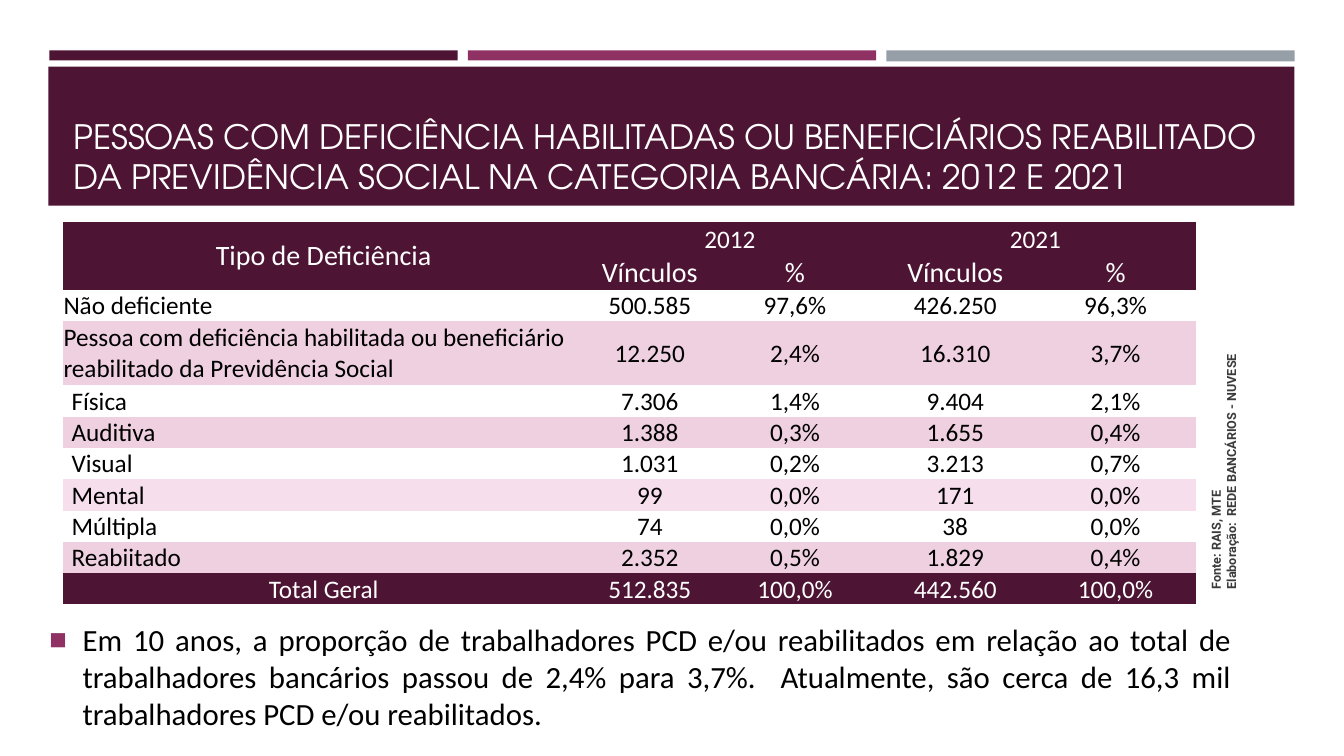
from dataclasses import dataclass

from lxml import etree
from pptx import Presentation
from pptx import util as u
from pptx.dml import color
from pptx.enum import shapes, text
from pptx.oxml import ns

SCALE = 9144
PLUM, ROSE, GREY = "4D1434", "903163", "969FA7"
WHITE, BLACK, INK = "FFFFFF", "000000", "3B3B3B"
PINK, PALE = "EFD0E0", "F6DEEC"
LEFT, MID, JUST = text.PP_ALIGN.LEFT, text.PP_ALIGN.CENTER, text.PP_ALIGN.JUSTIFY
CENTRE, BASE = text.MSO_ANCHOR.MIDDLE, text.MSO_ANCHOR.BOTTOM


@dataclass
class Box:
    x: int
    y: int
    w: int
    h: int

    def emu(self) -> list[int]:
        return [px(n) for n in (self.x, self.y, self.w, self.h)]


@dataclass
class Bar:
    box: Box
    fill: str


@dataclass
class Row:
    label: str
    data: str
    fill: str = WHITE
    ink: str = BLACK
    inset: int = 1
    high: int = 31
    align: int = LEFT


BARS = [
    Bar(Box(49, 50, 405, 10), PLUM),
    Bar(Box(464, 50, 405, 10), ROSE),
    Bar(Box(879, 50, 405, 11), GREY),
    Bar(Box(48, 66, 1236, 138), PLUM),
]

WIDTHS = [518, 129, 159, 159, 159]
HEADS = [33, 34]
ROWS = [
    Row("Não deficiente", "500.585 97,6% 426.250 96,3%"),
    Row("Pessoa com deficiência habilitada ou beneficiário reabilitado da Previdência Social",
        "12.250 2,4% 16.310 3,7%", PINK, high=64),
    Row("Física", "7.306 1,4% 9.404 2,1%", inset=9),
    Row("Auditiva", "1.388 0,3% 1.655 0,4%", PINK, inset=9),
    Row("Visual", "1.031 0,2% 3.213 0,7%", inset=9),
    Row("Mental", "99 0,0% 171 0,0%", PALE, inset=9),
    Row("Múltipla", "74 0,0% 38 0,0%", inset=9),
    Row("Reabiitado", "2.352 0,5% 1.829 0,4%", PINK, inset=9),
    Row("Total Geral", "512.835 100,0% 442.560 100,0%", PLUM, WHITE, align=MID),
]


def px(n: int) -> int:
    return n * SCALE


def rgb(code: str) -> color.RGBColor:
    return color.RGBColor.from_string(code)


def write(frame, words: str, *, size: int, ink: str = BLACK, font: str = "Calibri",
          bold: bool = False, align: int = LEFT, lead: float | None = None) -> None:
    frame.word_wrap = True
    for i, line in enumerate(words.split("\n")):
        para = frame.add_paragraph() if i else frame.paragraphs[0]
        para.alignment = align
        if lead:
            para.line_spacing = u.Pt(lead)
        run = para.add_run()
        run.text = line
        run.font.size = u.Pt(size)
        run.font.name = font
        run.font.bold = bold
        run.font.color.rgb = rgb(ink)


def draw(slide, bar: Bar):
    shape = slide.shapes.add_shape(shapes.MSO_SHAPE.RECTANGLE, *bar.box.emu())
    shape.shadow.inherit = False
    shape.fill.solid()
    shape.fill.fore_color.rgb = rgb(bar.fill)
    shape.line.fill.background()
    return shape


def head(slide) -> None:
    title = slide.shapes.title
    for bar in BARS:
        title.element.addprevious(draw(slide, bar).element)
    title.left, title.top, title.width, title.height = Box(63, 66, 1206, 134).emu()
    frame = title.text_frame
    frame.auto_size = text.MSO_AUTO_SIZE.NONE
    frame.vertical_anchor = BASE
    write(frame, "PESSOAS COM DEFICIÊNCIA HABILITADAS OU BENEFICIÁRIOS REABILITADO "
          "DA PREVIDÊNCIA SOCIAL NA CATEGORIA BANCÁRIA: 2012 E 2021",
          size=24, ink=WHITE, font="TeX Gyre Adventor", lead=28.6)


def put(cell, words: str, fill: str, *, inset: int = 1, anchor: int = CENTRE, **style) -> None:
    cell.margin_left = px(inset)
    cell.margin_top = cell.margin_right = px(1)
    cell.margin_bottom = 0
    cell.vertical_anchor = anchor
    cell.fill.solid()
    cell.fill.fore_color.rgb = rgb(fill)
    write(cell.text_frame, words, **style)


def grid(slide) -> None:
    highs = HEADS + [row.high for row in ROWS]
    box = Box(62, 220, sum(WIDTHS), sum(highs))
    holder = slide.shapes.add_table(len(highs), len(WIDTHS), *box.emu())
    for style in holder.element.iter(ns.qn("a:tableStyleId")):
        style.text = "{2D5ABB26-0587-4C30-8999-92F81FD0307C}"
    table = holder.table
    table.first_row = table.horz_banding = False
    for col, wide in zip(table.columns, WIDTHS):
        col.width = px(wide)
    for line, high in zip(table.rows, highs):
        line.height = px(high)

    table.cell(0, 0).merge(table.cell(1, 0))
    put(table.cell(0, 0), "Tipo de Deficiência", PLUM, size=20, ink=WHITE, align=MID)
    for c, year in ((1, "2012"), (3, "2021")):
        table.cell(0, c).merge(table.cell(0, c + 1))
        put(table.cell(0, c), year, PLUM, anchor=BASE, size=18, ink=WHITE, align=MID)
        for k, name in enumerate(("Vínculos", "%")):
            put(table.cell(1, c + k), name, PLUM, anchor=BASE, size=20, ink=WHITE, align=MID)

    for r, row in enumerate(ROWS, len(HEADS)):
        put(table.cell(r, 0), row.label, row.fill, inset=row.inset,
            size=18, ink=row.ink, align=row.align)
        for c, value in enumerate(row.data.split(), 1):
            put(table.cell(r, c), value, row.fill, size=18, ink=row.ink, align=MID)


def mark(para) -> None:
    props = para._p.get_or_add_pPr()
    props.set("marL", str(px(33)))
    props.set("indent", str(px(-33)))
    tint = etree.SubElement(props, ns.qn("a:buClr"))
    etree.SubElement(tint, ns.qn("a:srgbClr"), val=ROSE)
    etree.SubElement(props, ns.qn("a:buSzPct"), val="60000")
    etree.SubElement(props, ns.qn("a:buFont"), typeface="Calibri")
    etree.SubElement(props, ns.qn("a:buChar"), char="■")


def note(slide) -> None:
    frame = slide.shapes.add_textbox(*Box(39, 575, 1192, 191).emu()).text_frame
    frame.vertical_anchor = CENTRE
    write(frame, "Em 10 anos, a proporção de trabalhadores PCD e/ou reabilitados em relação "
          "ao total de trabalhadores bancários passou de 2,4% para 3,7%.  Atualmente, são "
          "cerca de 16,3 mil trabalhadores PCD e/ou reabilitados.", size=22, align=JUST)
    para = frame.paragraphs[0]
    para.space_before, para.space_after = u.Pt(4), u.Pt(6)
    mark(para)


def source(slide) -> None:
    side = slide.shapes.add_textbox(*Box(1027, 388, 373, 40).emu())
    side.rotation = 270
    write(side.text_frame, "Fonte: RAIS, MTE\nElaboração:  REDE BANCÁRIOS - NUVESE",
          size=9, ink=INK, font="Roboto", bold=True)


def main() -> None:
    deck = Presentation()
    deck.slide_width, deck.slide_height = px(1333), px(750)
    slide = deck.slides.add_slide(deck.slide_layouts[5])
    head(slide)
    note(slide)
    grid(slide)
    source(slide)
    deck.save("out.pptx")


if __name__ == "__main__":
    main()
